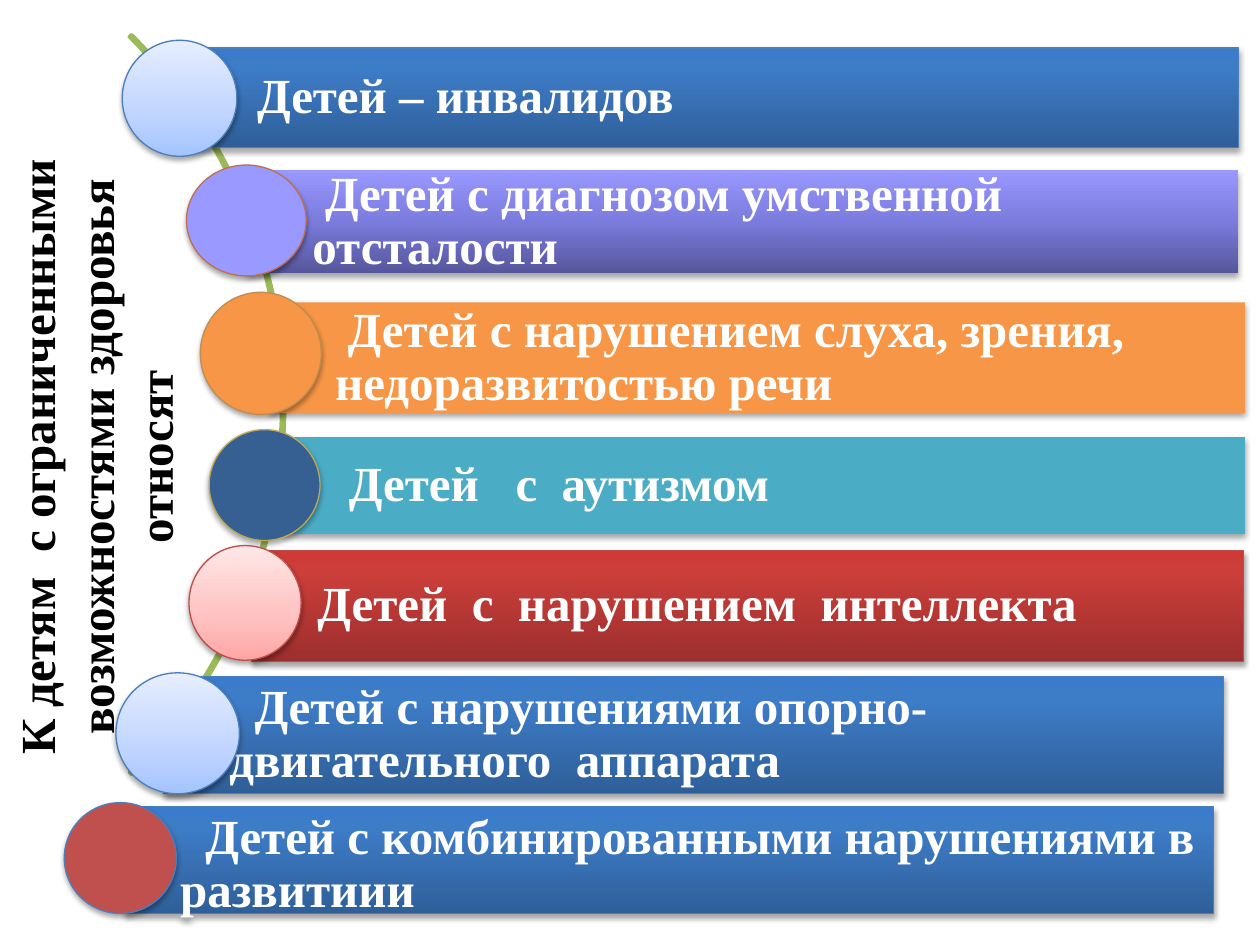
from lxml import etree
from pptx import Presentation
from pptx.dml.color import RGBColor
from pptx.enum.shapes import MSO_SHAPE
from pptx.enum.text import MSO_ANCHOR, PP_ALIGN
from pptx.oxml.ns import qn
from pptx.util import Emu, Pt

ARC, RECT, OVAL = MSO_SHAPE.BLOCK_ARC, MSO_SHAPE.RECTANGLE, MSO_SHAPE.OVAL
MIDDLE = MSO_ANCHOR.MIDDLE
LEFT, CENTER = PP_ALIGN.LEFT, PP_ALIGN.CENTER

EMU_PER_PX = 9144  # 100 px to the inch
FONT, FONT_SIZE = "Times New Roman", 28
SPACE_WIDTH = 10  # first-line indent step, px

COLORS = {
    "white": "FFFFFF", "black": "000000", "green": "9BBB59",
    "blue_line": "4B7EBC", "red_line": "BF4C48", "brown_line": "BF6F4F",
    "tan_line": "BE8D52", "gold_line": "BDA954",
    "violet": "9999FF", "orange": "F79646", "teal": "4BACC6",
    "navy": "376092", "brick": "C0504D",
}

# Stops run from the bottom edge to the top edge: (percent, colour)
GRADIENTS = {
    "blue_bar": [(0, "2F5F99"), (80, "3D7CC7"), (100, "3A7CCB")],
    "violet_bar": [(0, "56569C"), (50, "7B7BDD"), (100, "9999FF")],
    "red_bar": [(0, "9C2F2D"), (80, "CB3E3A"), (100, "CE3B37")],
    "pale_blue": [(0, "A4C4FF"), (35, "BFD4FF"), (100, "E6EEFF")],
    "pale_red": [(0, "FFA6A5"), (35, "FFC0BF"), (100, "FFE7E7")],
}

BAR_INSETS = (52, 8, 8, 8)
LAST_BAR_INSETS = (43, 12, 12, 4)

# text, indent in spaces, bar box, bar fill, bar line,
# circle box, circle fill, circle line
ROWS = [
    ("Детей – инвалидов", 1, (142, 38, 841, 79), "blue_bar", "blue_line",
     (97, 32, 91, 92), "pale_blue", "blue_line"),
    ("Детей с диагнозом умственной отсталости", 1,
     (196, 135, 787, 82), "violet_bar", None,
     (148, 131, 95, 88), "violet", "brown_line"),
    ("Детей с нарушением слуха, зрения, недоразвитостью речи", 1,
     (214, 240, 774, 88), "orange", None,
     (159, 232, 96, 97), "orange", "tan_line"),
    ("Детей   с  аутизмом", 0, (225, 347, 763, 77), "teal", None,
     (166, 341, 88, 88), "navy", "gold_line"),
    ("Детей  с  нарушением  интеллекта", 0,
     (200, 437, 787, 88), "red_bar", "red_line",
     (150, 433, 89, 91), "pale_red", "red_line"),
    ("Детей с нарушениями опорно-двигательного  аппарата", 2,
     (130, 537, 841, 93), "blue_bar", "blue_line",
     (92, 534, 98, 96), "pale_blue", "blue_line"),
    ("Детей с комбинированными нарушениями в развитиии", 2,
     (100, 640, 863, 85), "blue_bar", "blue_line",
     (51, 637, 89, 88), "brick", "blue_line"),
]


def px(value):
    return Emu(value * EMU_PER_PX)


def rgb(name):
    return RGBColor.from_string(COLORS[name])


class Deck:
    def __init__(self, width, height):
        self.prs = Presentation()
        self.prs.slide_width, self.prs.slide_height = px(width), px(height)
        self.slide = self.prs.slides.add_slide(self.prs.slide_layouts[6])

    def shape(self, kind, box, fill=None, line=None, line_pt=0.75):
        shape = self.slide.shapes.add_shape(kind, *map(px, box))
        shape.shadow.inherit = False
        if fill in GRADIENTS:
            self.gradient(shape, GRADIENTS[fill])
        elif fill:
            shape.fill.solid()
            shape.fill.fore_color.rgb = rgb(fill)
        else:
            shape.fill.background()
        if line:
            shape.line.color.rgb = rgb(line)
            shape.line.width = Pt(line_pt)
        else:
            shape.line.fill.background()
        return shape

    def gradient(self, shape, stops):
        shape.fill.gradient()
        shape.fill.gradient_angle = 90
        stop_list = shape._element.spPr.find(".//" + qn("a:gsLst"))
        for old_stop in list(stop_list):
            stop_list.remove(old_stop)
        for percent, color in stops:
            stop = etree.SubElement(stop_list, qn("a:gs"), pos=str(percent * 1000))
            etree.SubElement(stop, qn("a:srgbClr"), val=color)

    def drop_shadow(self, shape):
        effects = shape._element.spPr.find(qn("a:effectLst"))
        shadow = etree.SubElement(effects, qn("a:outerShdw"), blurRad="40000",
                                  dist="23000", dir="5400000", rotWithShape="0")
        color = etree.SubElement(shadow, qn("a:srgbClr"), val=COLORS["black"])
        etree.SubElement(color, qn("a:alpha"), val="35000")

    def label(self, shape, text, color, align):
        frame = shape.text_frame
        frame.word_wrap = True
        frame.text = text
        paragraph = frame.paragraphs[0]
        paragraph.alignment = align
        font = paragraph.runs[0].font
        font.name, font.size, font.bold = FONT, Pt(FONT_SIZE), True
        font.color.rgb = rgb(color)
        return frame

    def bar(self, box, fill, line, text, indent, insets):
        bar = self.shape(RECT, box, fill, line)
        self.drop_shadow(bar)
        frame = self.label(bar, text, "white", LEFT)
        frame.vertical_anchor = MIDDLE
        (frame.margin_left, frame.margin_top,
         frame.margin_right, frame.margin_bottom) = map(px, insets)
        paragraph = frame.paragraphs[0]
        paragraph.line_spacing = 0.9
        properties = paragraph._p.get_or_add_pPr()
        properties.set("marL", "0")
        properties.set("indent", str(px(indent * SPACE_WIDTH)))

    def circle(self, box, fill, line):
        self.drop_shadow(self.shape(OVAL, box, fill, line))

    def row(self, text, indent, bar_box, bar_fill, bar_line,
            circle_box, circle_fill, circle_line, insets=BAR_INSETS):
        self.bar(bar_box, bar_fill, bar_line, text, indent, insets)
        self.circle(circle_box, circle_fill, circle_line)

    def arc(self, box, start, end, thickness):
        arc = self.shape(ARC, box, line="green", line_pt=2)
        for index, value in enumerate((start, end, thickness)):
            arc.adjustments[index] = value

    def vertical_title(self, box, text):
        """Add centred text that reads from bottom to top."""
        title = self.slide.shapes.add_textbox(*map(px, box))
        frame = self.label(title, text, "black", CENTER)
        frame._txBody.bodyPr.set("vert", "vert270")


def main():
    deck = Deck(1000, 750)
    deck.arc((-604, -94, 830, 830), 189, 27, 0.003)
    for row in ROWS[:-1]:
        deck.row(*row)
    deck.vertical_title((0, 85, 162, 555),
                        "К детям  с ограниченными возможностями здоровья относят")
    deck.row(*ROWS[-1], insets=LAST_BAR_INSETS)
    deck.prs.save("out.pptx")


if __name__ == "__main__":
    main()
